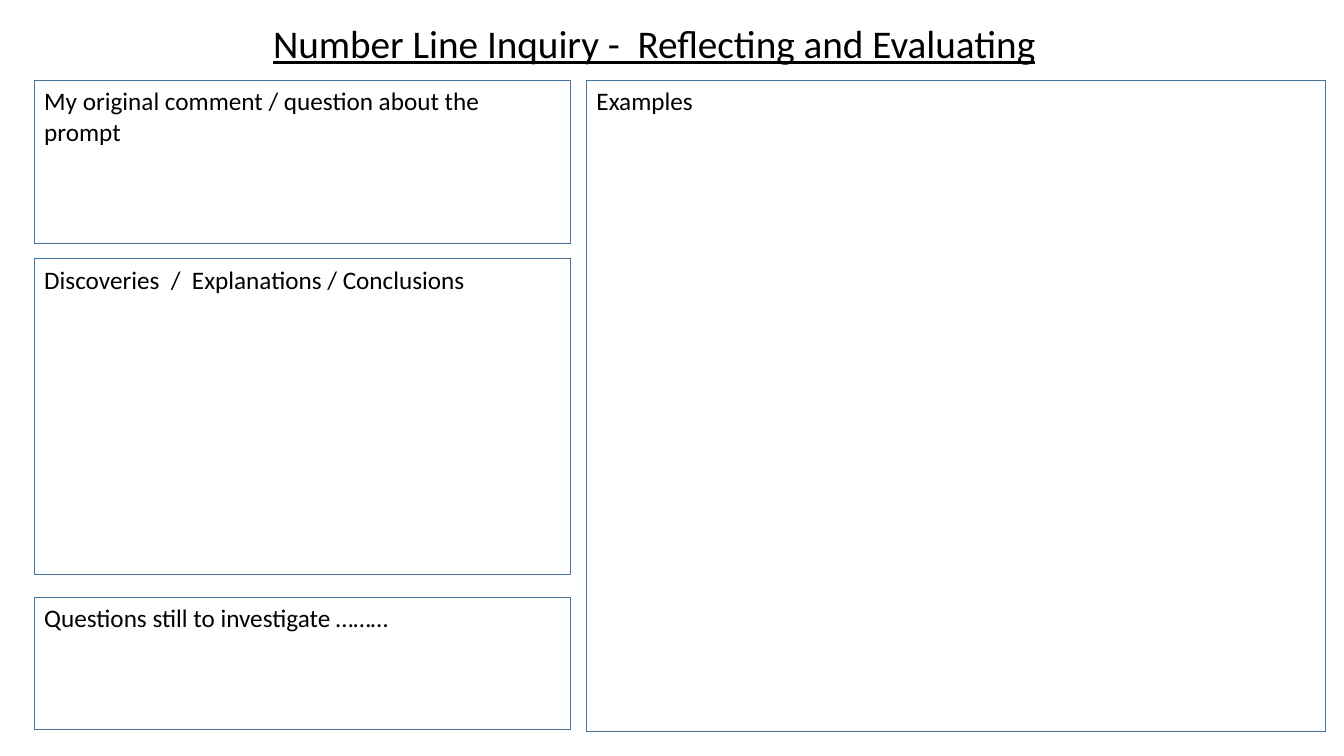
from pptx import Presentation
from pptx.dml.color import RGBColor as RGB
from pptx.enum.shapes import MSO_SHAPE as Shape
from pptx.enum.text import MSO_ANCHOR as Anchor, MSO_AUTO_SIZE as Auto, PP_ALIGN as Align
from pptx.util import Pt


def tint(color, code):
    color.rgb = RGB.from_string(code)


def write(frame, text, size=18, align=Align.LEFT, anchor=Anchor.TOP, line=False, space=1.0):
    frame.word_wrap = True
    frame.auto_size = Auto.NONE
    frame.vertical_anchor = anchor
    frame.text = text
    para = frame.paragraphs[0]
    para.alignment = align
    para.line_spacing = space
    font = para.runs[0].font
    font.name = "Calibri"
    font.size = Pt(size)
    font.underline = line
    tint(font.color, "000000")


class Sheet:
    """Holds the style and the current slide of a worksheet."""

    edge = "43739E"
    width = 0.75

    def __init__(self, deck):
        self.slide = deck.slides.add_slide(deck.slide_layouts[5])

    def title(self, text, left, top, width, height):
        head = self.slide.shapes.title
        head.left, head.top = Pt(left), Pt(top)
        head.width, head.height = Pt(width), Pt(height)
        write(head.text_frame, text, size=28, align=Align.CENTER,
              anchor=Anchor.MIDDLE, line=True, space=0.9)

    def panel(self, text, left, top, width, height):
        box = self.slide.shapes.add_shape(
            Shape.RECTANGLE, Pt(left), Pt(top), Pt(width), Pt(height))
        box.shadow.inherit = False
        box.fill.background()
        tint(box.line.color, self.edge)
        box.line.width = Pt(self.width)
        write(box.text_frame, text)


def main():
    deck = Presentation()
    deck.slide_width, deck.slide_height = Pt(960), Pt(540)
    sheet = Sheet(deck)
    left, wide, top = 24.5, 383, 57.6
    sheet.title("Number Line Inquiry -  Reflecting and Evaluating", left, 8, 885.6, 49.6)
    column = [
        ("My original comment / question about the prompt", top, 116.6),
        ("Discoveries  /  Explanations / Conclusions", 185, 225.4),
        ("Questions still to investigate ………", 427, 94.3),
    ]
    for text, y, height in column:
        sheet.panel(text, left, y, wide, height)
    sheet.panel("Examples", 419, top, 527.8, 465.1)
    deck.save("out.pptx")


if __name__ == "__main__":
    main()
